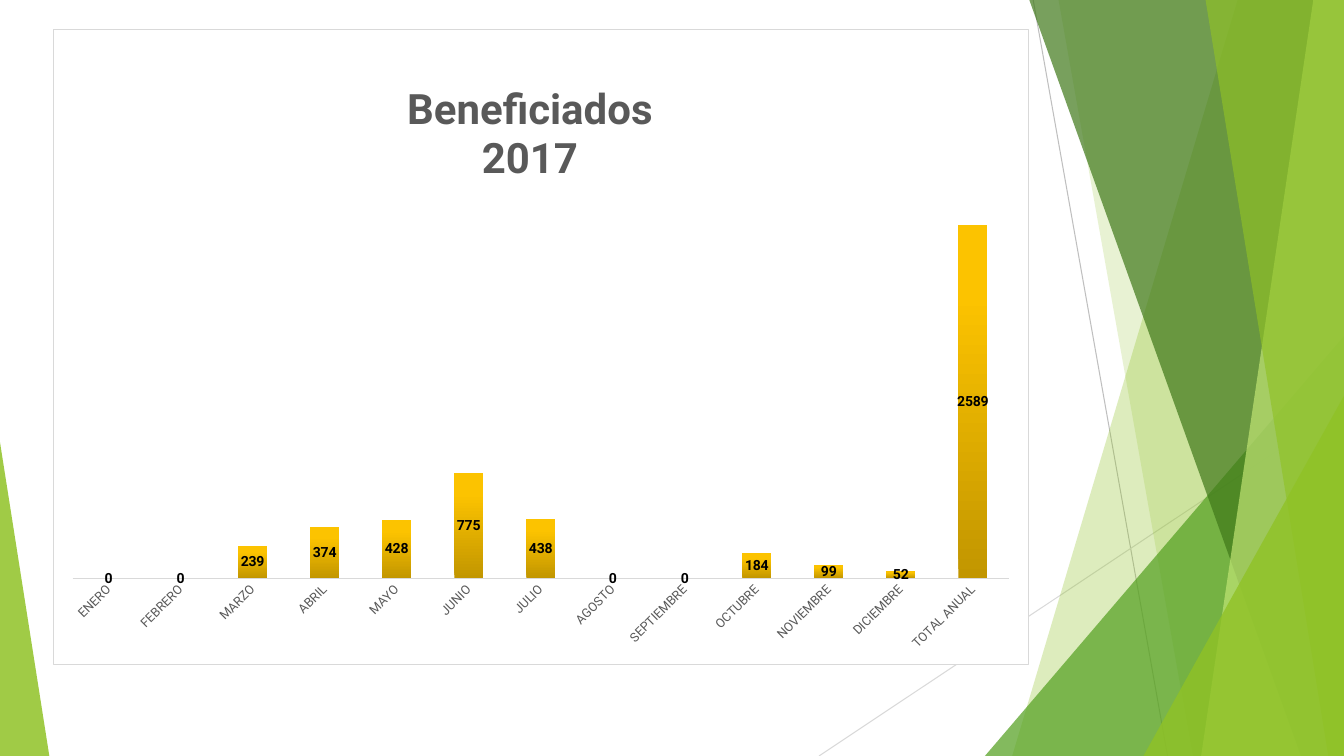
from dataclasses import dataclass

from lxml.etree import SubElement
from pptx import Presentation
from pptx.chart.data import CategoryChartData
from pptx.dml.color import RGBColor
from pptx.enum.chart import XL_CHART_TYPE as ChartType
from pptx.enum.chart import XL_LABEL_POSITION as LabelPos
from pptx.enum.chart import XL_TICK_MARK as Tick
from pptx.enum.shapes import MSO_CONNECTOR as Conn
from pptx.enum.shapes import MSO_SHAPE as Shape
from pptx.oxml import parse_xml
from pptx.oxml.ns import nsdecls, qn
from pptx.util import Pt

PX = 9525
W, H = 1280, 720
TOP = -1
FONT = "Roboto"
COLORS = {
    "white": "FFFFFF",
    "black": "000000",
    "text": "595959",
    "rule": "D9D9D9",
    "dark_rule": "BFBFBF",
    "lime": "90C226",
    "green": "54A021",
    "forest": "3F7819",
    "pale": "C0E474",
}
GOLD_STOPS = [(0, "C29600"), (80, "FCC300"), (100, "FDC400")]
MONTHS = {
    "ENERO": 0, "FEBRERO": 0, "MARZO": 239, "ABRIL": 374, "MAYO": 428,
    "JUNIO": 775, "JULIO": 438, "AGOSTO": 0, "SEPTIEMBRE": 0,
    "OCTUBRE": 184, "NOVIEMBRE": 99, "DICIEMBRE": 52,
}


@dataclass
class Rule:
    x1: int
    y1: int
    x2: int
    y2: int
    color: str


@dataclass
class Band:
    top_x: int
    bottom_x: int
    color: str
    opacity: int


@dataclass
class Wedge:
    x: int
    y: int
    w: int
    apex: int
    color: str
    opacity: int


RULES = [
    Rule(984, 0, 1112, H, "dark_rule"),
    Rule(W, 387, 780, H, "rule"),
]
FACETS = [
    Band(1179, 964, "lime", 30),
    Band(1008, 1136, "lime", 20),
    Wedge(938, 320, 342, 1, "green", 72),
    Band(980, 1239, "forest", 70),
    Band(1251, 1144, "pale", 70),
    Band(1148, 1265, "lime", 65),
    Wedge(1089, 377, 191, 1, "lime", 80),
    Wedge(0, 421, 47, 0, "lime", 85),
]


def rgb(name: str) -> RGBColor:
    return RGBColor.from_string(COLORS[name])


def draw_rule(shapes, rule: Rule) -> None:
    ends = (rule.x1, rule.y1, rule.x2, rule.y2)
    cxn = shapes.add_connector(Conn.STRAIGHT, *(v * PX for v in ends))
    cxn.line.color.rgb = rgb(rule.color)
    cxn.line.width = Pt(0.75)
    SubElement(cxn.element.spPr, qn("a:effectLst"))


def draw_facet(shapes, facet: Band | Wedge) -> None:
    if isinstance(facet, Band):
        builder = shapes.build_freeform(facet.top_x, TOP, scale=PX)
        builder.add_line_segments([(W, TOP), (W, H), (facet.bottom_x, H)])
        sp = builder.convert_to_shape()
    else:
        box = (facet.x, facet.y, facet.w, H - facet.y)
        sp = shapes.add_shape(Shape.ISOSCELES_TRIANGLE, *(v * PX for v in box))
        sp.adjustments[0] = facet.apex
    sp.shadow.inherit = False
    sp.line.fill.background()
    sp.fill.solid()
    sp.fill.fore_color.rgb = rgb(facet.color)
    color = sp.element.xpath("./p:spPr/a:solidFill/a:srgbClr")[0]
    SubElement(color, qn("a:alpha"), val=str(facet.opacity * 1000))


def place(element, index: int, inner: bool = False, **fractions: float) -> None:
    for old in element.findall(qn("c:layout")):
        element.remove(old)
    target = '<c:layoutTarget val="inner"/>' if inner else ""
    modes = "".join(f'<c:{k}Mode val="edge"/>' for k in "xy")
    sizes = "".join(f'<c:{k} val="{v}"/>' for k, v in fractions.items())
    element.insert(index, parse_xml(
        f'<c:layout {nsdecls("c")}><c:manualLayout>{target}{modes}{sizes}'
        "</c:manualLayout></c:layout>"))


def format_title(chart) -> None:
    chart.has_title = True
    title = chart.chart_title
    title.include_in_layout = False
    tf = title.text_frame
    tf.text = "Beneficiados\n2017"
    for p in tf.paragraphs:
        p.font.name = FONT
        p.font.size = Pt(30)
        p.font.bold = True
        p.font.color.rgb = rgb("text")
    place(title.element, 1, x=0.36, y=0.08)


def format_axes(chart) -> None:
    months = chart.category_axis
    months.major_tick_mark = months.minor_tick_mark = Tick.NONE
    months.format.line.color.rgb = rgb("rule")
    months.format.line.width = Pt(1)
    font = months.tick_labels.font
    font.name = FONT
    font.size = Pt(9)
    font.color.rgb = rgb("text")
    chart.element.xpath(".//c:catAx/c:txPr/a:bodyPr")[0].set("rot", "-2700000")
    values = chart.value_axis
    values.minimum_scale, values.maximum_scale = 0, 3000
    values.has_major_gridlines = False
    values.visible = False


def format_columns(chart) -> None:
    plot = chart.plots[0]
    plot.gap_width = 150
    plot.overlap = 100
    plot.vary_by_categories = False
    series = plot.series[0]
    series.invert_if_negative = False
    series.format.fill.gradient()
    stops = "".join(f'<a:gs pos="{pos * 1000}"><a:srgbClr val="{color}"/></a:gs>'
                    for pos, color in GOLD_STOPS)
    old = chart.element.xpath(".//c:ser/c:spPr/a:gradFill")[0]
    old.getparent().replace(old, parse_xml(
        f'<a:gradFill {nsdecls("a")}><a:gsLst>{stops}</a:gsLst>'
        '<a:lin ang="16200000" scaled="0"/></a:gradFill>'))
    labels = series.data_labels
    labels.show_value = True
    labels.position = LabelPos.CENTER
    labels.font.name = FONT
    labels.font.size = Pt(10)
    labels.font.bold = True
    labels.font.color.rgb = rgb("black")


def draw_chart(shapes) -> None:
    data = CategoryChartData()
    data.categories = [*MONTHS, "TOTAL ANUAL"]
    data.add_series("Series 1", [*MONTHS.values(), sum(MONTHS.values())])
    box = (50, 28, 930, 605)
    chart = shapes.add_chart(ChartType.COLUMN_STACKED, *(v * PX for v in box), data).chart
    chart.has_legend = False
    chart.font.name = FONT
    chart.font.size = Pt(10)
    chart.font.color.rgb = rgb("black")
    format_title(chart)
    format_axes(chart)
    format_columns(chart)
    place(chart.element.xpath(".//c:plotArea")[0], 0, True, x=0.02, y=0.22, w=0.96, h=0.645)
    chart.element.find(qn("c:txPr")).addprevious(parse_xml(
        f'<c:spPr {nsdecls("c", "a")}>'
        f'<a:solidFill><a:srgbClr val="{COLORS["white"]}"/></a:solidFill>'
        f'<a:ln w="{Pt(0.75)}"><a:solidFill><a:srgbClr val="{COLORS["rule"]}"/>'
        "</a:solidFill></a:ln></c:spPr>"))


def main() -> None:
    prs = Presentation()
    prs.slide_width, prs.slide_height = W * PX, H * PX
    shapes = prs.slides.add_slide(prs.slide_layouts[6]).shapes
    for rule in RULES:
        draw_rule(shapes, rule)
    for facet in FACETS:
        draw_facet(shapes, facet)
    draw_chart(shapes)
    prs.save("out.pptx")


if __name__ == "__main__":
    main()
